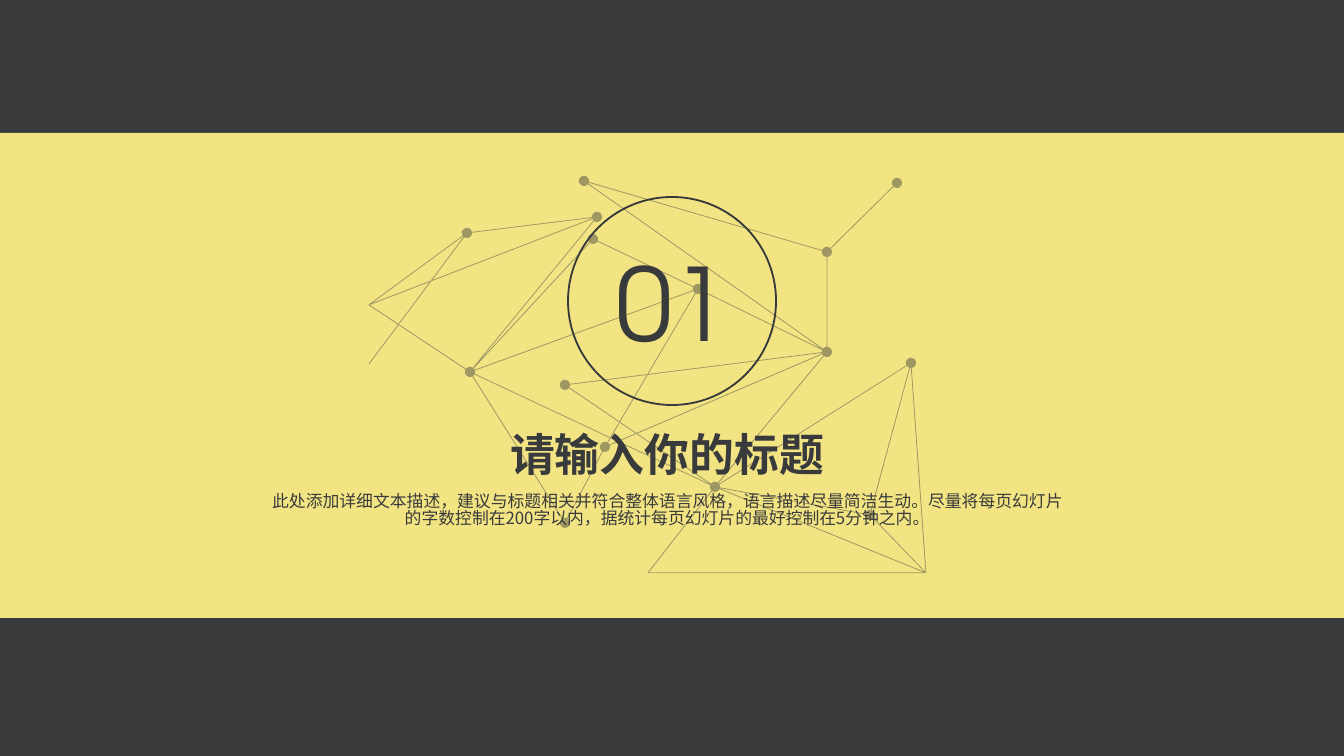
"""Build a section title slide with a dot-and-line network behind the number."""
import math

import pptx
import pptx.dml.color
import pptx.enum.shapes
import pptx.enum.text
import pptx.oxml
import pptx.oxml.ns
import pptx.util

SCALE = pptx.util.Inches(10) / 1344
DARK = "383A3B"
YELLOW = "F3E483"
NODE_RADIUS = 5
NODE_SIDES = 24
EDGE_WIDTH = 0.8

NODES = {
    "A": (584, 181), "B": (597, 217), "C": (593, 239), "D": (467, 233),
    "E": (470, 372), "F": (698, 289), "G": (827, 252), "H": (897, 183),
    "I": (827, 352), "J": (565, 385), "K": (605, 447), "L": (715, 487),
    "M": (911, 363), "N": (870, 515), "O": (565, 523),
}
CORNERS = {"P": (369, 305), "Q": (369, 364), "R": (648, 573), "S": (926, 573)}
EDGES = (
    "AG AI BD BP BE CE CF FI EF DP DQ PE EL EO OK KF KI JI JL "
    "IL GI GH LM LN LS LR RS MN MS NS"
).split()


def emu(pixels):
    """Turn pixels into EMU."""
    return round(pixels * SCALE)


def color(value):
    """Turn a hex string into a colour."""
    return pptx.dml.color.RGBColor.from_string(value)


def set_fill(shape, value, opacity=100):
    """Fill a shape with one colour at an opacity in percent."""
    shape.fill.solid()
    shape.fill.fore_color.rgb = color(value)
    if opacity < 100:
        solid = shape.fill._xPr.find(pptx.oxml.ns.qn("a:solidFill"))
        alpha = pptx.oxml.parse_xml(
            f'<a:alpha {pptx.oxml.ns.nsdecls("a")} val="{opacity * 1000}"/>'
        )
        solid[0].append(alpha)


def add_preset(slide, kind, left, top, width, height, fill=None, line=None):
    """Add a preset shape with an optional fill and outline."""
    shape = slide.shapes.add_shape(
        kind, emu(left), emu(top), emu(width), emu(height)
    )
    shape.shadow.inherit = False
    if fill:
        set_fill(shape, fill)
    else:
        shape.fill.background()
    if line:
        shape.line.color.rgb = color(line)
        shape.line.width = pptx.util.Pt(1)
    else:
        shape.line.fill.background()
    return shape


def write_text(shape, text, font, size, bold=False, spacing=None):
    """Write one centred run into a shape."""
    frame = shape.text_frame
    frame.word_wrap = True
    paragraph = frame.paragraphs[0]
    paragraph.alignment = pptx.enum.text.PP_ALIGN.CENTER
    paragraph.line_spacing = spacing
    run = paragraph.add_run()
    run.text = text
    run.font.name = font
    run.font.size = pptx.util.Pt(size)
    run.font.bold = bold
    run.font.color.rgb = color(DARK)


def add_text(slide, left, top, width, height, inset, anchor, **text_options):
    """Add a text box with equal insets."""
    box = slide.shapes.add_textbox(emu(left), emu(top), emu(width), emu(height))
    frame = box.text_frame
    frame.margin_left = frame.margin_right = emu(inset)
    frame.margin_top = frame.margin_bottom = emu(inset)
    frame.vertical_anchor = anchor
    write_text(box, **text_options)
    return box


def dot_outline(center):
    """Return the outline of a round node."""
    x, y = center
    angles = [2 * math.pi * step / NODE_SIDES for step in range(NODE_SIDES)]
    return [
        (x + NODE_RADIUS * math.cos(angle), y + NODE_RADIUS * math.sin(angle))
        for angle in angles
    ]


def edge_outline(start, end):
    """Return a thin bar between two points, stopping at the rim of nodes."""
    points = NODES | CORNERS
    (x1, y1), (x2, y2) = points[start], points[end]
    length = math.hypot(x2 - x1, y2 - y1)
    dx, dy = (x2 - x1) / length, (y2 - y1) / length
    trim_start = NODE_RADIUS if start in NODES else 0
    trim_end = NODE_RADIUS if end in NODES else 0
    x1, y1 = x1 + dx * trim_start, y1 + dy * trim_start
    x2, y2 = x2 - dx * trim_end, y2 - dy * trim_end
    nx, ny = -dy * EDGE_WIDTH / 2, dx * EDGE_WIDTH / 2
    return [
        (x1 + nx, y1 + ny), (x2 + nx, y2 + ny),
        (x2 - nx, y2 - ny), (x1 - nx, y1 - ny),
    ]


def add_network(slide):
    """Draw all nodes and edges as one translucent freeform."""
    outlines = [edge_outline(*edge) for edge in EDGES]
    outlines += [dot_outline(center) for center in NODES.values()]
    contours = [[(emu(x), emu(y)) for x, y in outline] for outline in outlines]
    builder = slide.shapes.build_freeform(*contours[0][0], scale=1.0)
    builder.add_line_segments(contours[0][1:], close=True)
    for contour in contours[1:]:
        builder.move_to(*contour[0])
        builder.add_line_segments(contour[1:], close=True)
    network = builder.convert_to_shape()
    network.shadow.inherit = False
    set_fill(network, DARK, opacity=45)
    network.line.fill.background()


def main():
    """Build and save the slide."""
    presentation = pptx.Presentation()
    presentation.slide_width = emu(1344)
    presentation.slide_height = emu(756)
    slide = presentation.slides.add_slide(presentation.slide_layouts[6])
    set_fill(slide.background, DARK)
    shapes = pptx.enum.shapes.MSO_SHAPE
    anchors = pptx.enum.text.MSO_ANCHOR

    add_preset(slide, shapes.RECTANGLE, 0, 133, 1344, 485, fill=YELLOW)
    add_network(slide)
    number = add_preset(slide, shapes.OVAL, 568, 197, 208, 208, line=DARK)
    number.text_frame.vertical_anchor = anchors.MIDDLE
    write_text(number, "01", "TeX Gyre Adventor", 54)
    add_text(
        slide, 396, 414, 542, 79, 3, anchors.MIDDLE,
        text="请输入你的标题", font="Manrope", size=24, bold=True,
    )
    description = add_text(
        slide, 271, 495, 792, 40, 0, anchors.TOP,
        text="此处添加详细文本描述，建议与标题相关并符合整体语言风格，"
        "语言描述尽量简洁生动。尽量将每页幻灯片的字数控制在200字以内，"
        "据统计每页幻灯片的最好控制在5分钟之内。",
        font="Noto Sans CJK SC", size=9, spacing=0.8,
    )
    description.text_frame.auto_size = (
        pptx.enum.text.MSO_AUTO_SIZE.SHAPE_TO_FIT_TEXT
    )
    presentation.save("out.pptx")


if __name__ == "__main__":
    main()
